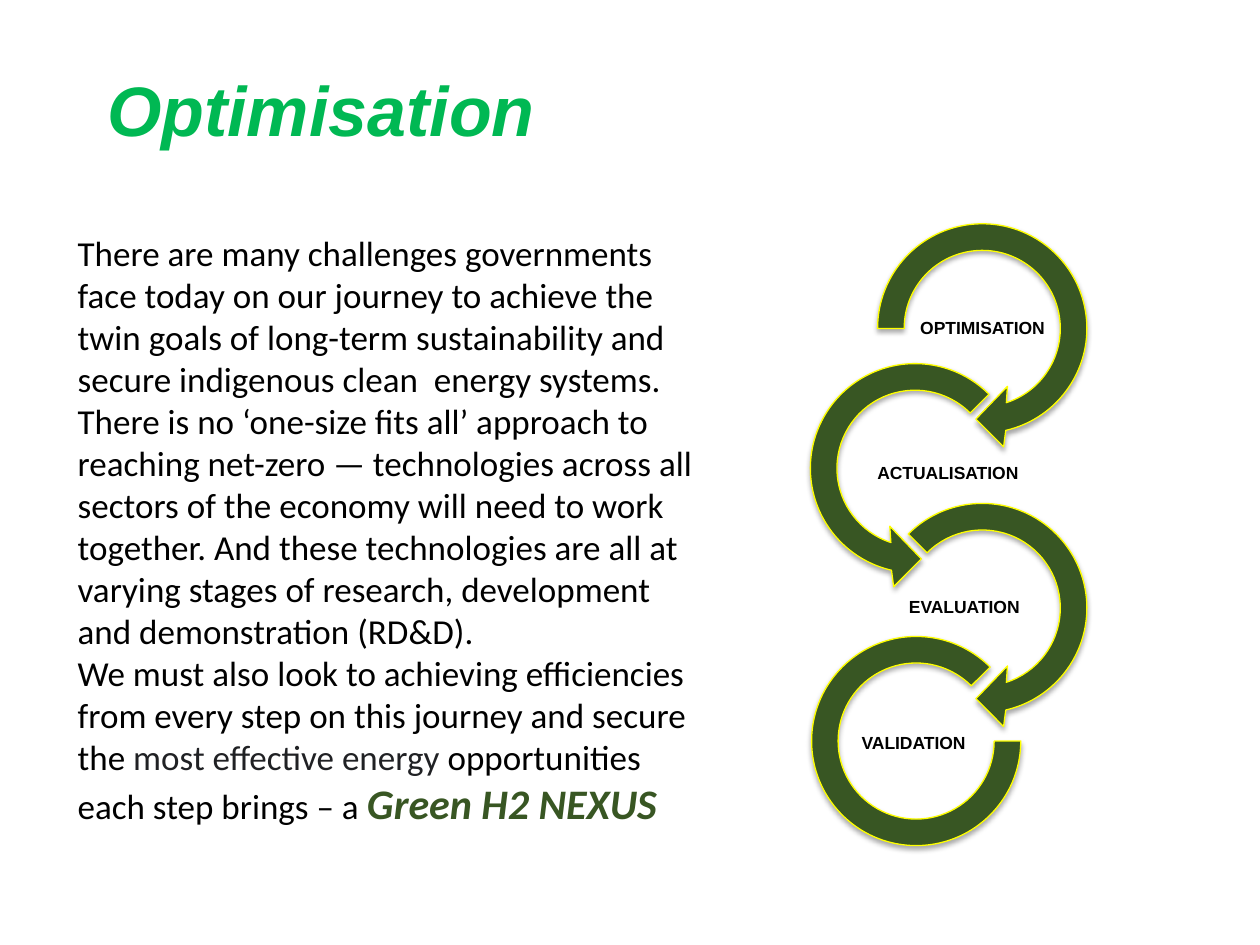
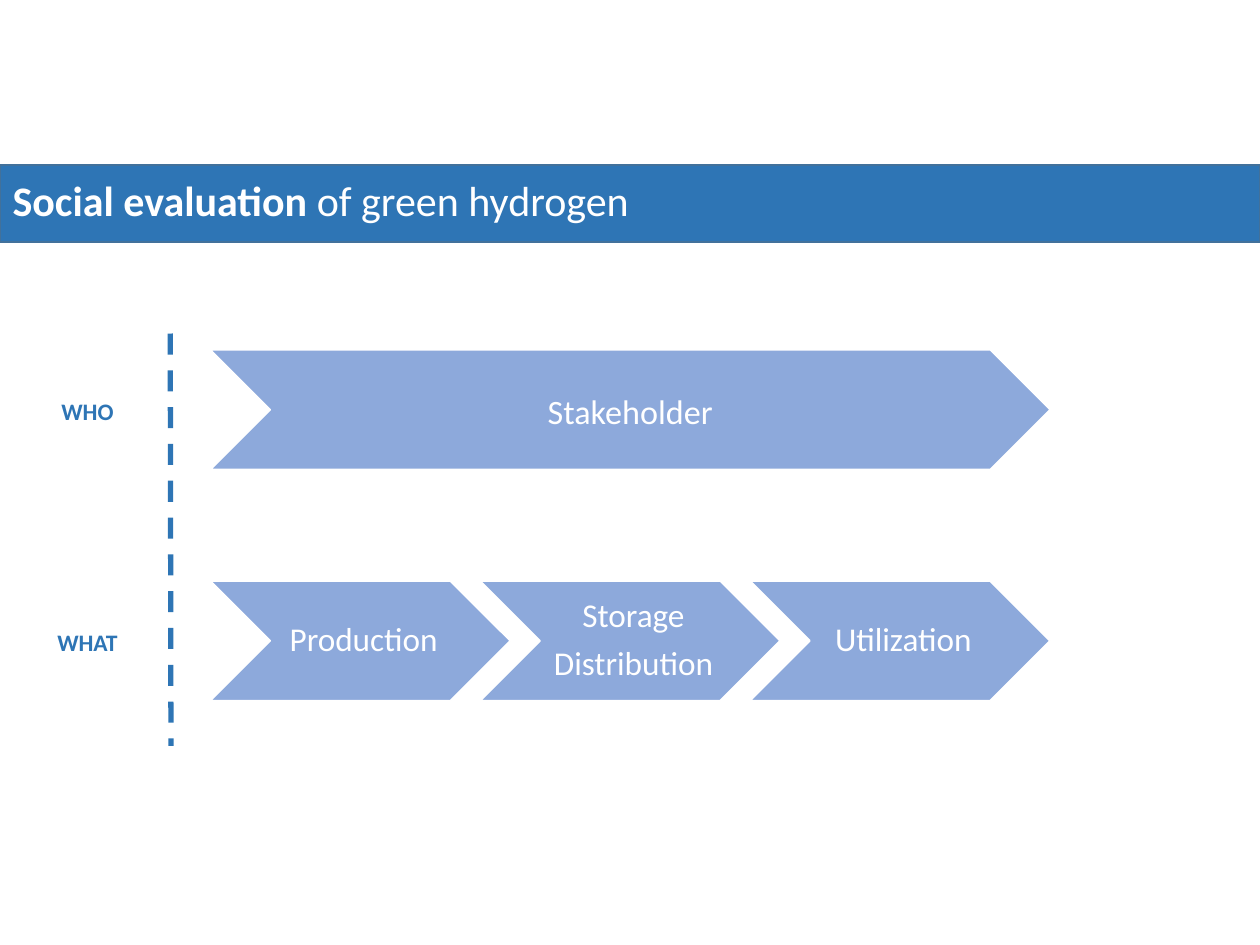
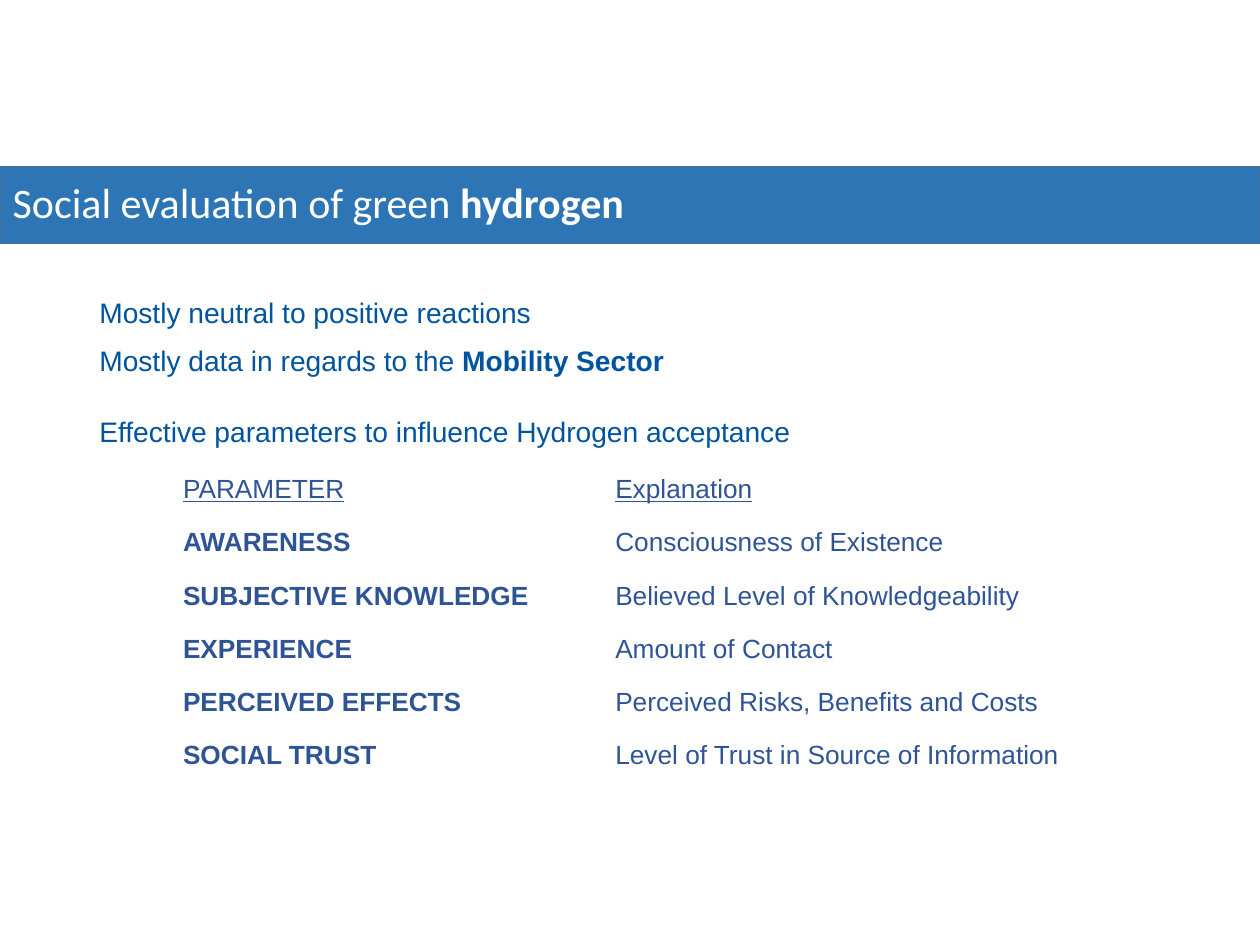
from math import cos, radians, sin, tan

from lxml.etree import SubElement
from pptx import Presentation
from pptx.dml.color import RGBColor
from pptx.enum.dml import MSO_LINE
from pptx.enum.shapes import MSO_CONNECTOR, MSO_SHAPE
from pptx.enum.text import MSO_ANCHOR, MSO_AUTO_SIZE, PP_ALIGN
from pptx.oxml.ns import qn
from pptx.util import Pt

BLACK = RGBColor(0x00, 0x00, 0x00)
WHITE = RGBColor(0xFF, 0xFF, 0xFF)
LIME = RGBColor(0x00, 0xB8, 0x53)
GREEN = RGBColor(0x38, 0x56, 0x23)
YELLOW = RGBColor(0xFF, 0xFF, 0x00)
GREY = RGBColor(0x20, 0x21, 0x24)
BLUE = RGBColor(0x2E, 0x75, 0xB5)
EDGE = RGBColor(0x42, 0x71, 0x9B)
PALE = RGBColor(0x8D, 0xA9, 0xDB)
NAVY = RGBColor(0x00, 0x54, 0x9F)
INDIGO = RGBColor(0x2F, 0x54, 0x96)


def setup(frame, pads=(7.2, 3.6, 7.2, 3.6), anchor=MSO_ANCHOR.TOP):
    """Wrap the text and set its left, top, right and bottom margins."""
    frame.word_wrap = True
    frame.auto_size = MSO_AUTO_SIZE.NONE
    frame.vertical_anchor = anchor
    frame.margin_left, frame.margin_top, frame.margin_right, frame.margin_bottom = map(Pt, pads)
    return frame


def write(para, texts, font, size, color, align=PP_ALIGN.LEFT, space=1.0, bold=False):
    """Add one run per text, all alike, and return the runs."""
    para.alignment = align
    para.line_spacing = space
    for text in texts:
        run = para.add_run()
        run.text = text
        run.font.name = font
        run.font.size = Pt(size)
        run.font.color.rgb = color
        run.font.bold = bold
    return para.runs


deck = Presentation()
deck.slide_width, deck.slide_height = Pt(720), Pt(540)
layout = deck.slide_layouts[5]

# Optimisation
slide = deck.slides.add_slide(layout)
title = slide.shapes.title
title.left, title.top, title.width, title.height = Pt(54), Pt(34.2), Pt(360), Pt(55.4)
frame = setup(title.text_frame)
write(frame.paragraphs[0], ["Optimisation"], "Arial", 40, LIME, bold=True)[0].font.italic = True

box = slide.shapes.add_textbox(Pt(37.3), Pt(128.7), Pt(373.7), Pt(368.6))
frame = setup(box.text_frame)
story = [
    ["There are many challenges governments face today on our journey to achieve the twin goals "
     "of long-term sustainability and secure indigenous clean  energy systems."],
    ["There is no ‘one-size fits all’ approach to reaching net-zero — technologies across all "
     "sectors of the economy will need to work together. And these technologies are all at "
     "varying stages of research, development and demonstration (RD&D)."],
    ["We must also look to achieving efficiencies from every step on this journey and secure the ",
     "most effective energy ", "opportunities each step brings – a ", "Green H2 NEXUS"],
]
for i, texts in enumerate(story):
    para = frame.add_paragraph() if i else frame.paragraphs[0]
    runs = write(para, texts, "Calibri", 20, BLACK)
runs[1].font.color.rgb = GREY
nexus = runs[3].font
nexus.size, nexus.bold, nexus.italic, nexus.color.rgb = Pt(24), True, True, GREEN

# Round arrows: three Bezier curves outside, the head, three curves inside
HALF, OUTER, INNER = 69.5, 59.8, 44.6
HEAD = [(12.2, 67.7), (-3.6, 51.8), (14.4, 33.1)]
rings = []
for i, (mid, side, start) in enumerate([(561.3, 1, 180), (522.9, -1, 225), (561.3, 1, 225)]):
    left, top = mid - HALF, 118.2 + 79.9 * i
    pen = slide.shapes.build_freeform(Pt(left), Pt(top))
    pen.add_line_segments([(Pt(left + x), Pt(top + y)) for x, y in
                           [(2 * HALF, 0), (2 * HALF, 2 * HALF), (0, 2 * HALF)]])
    ring = pen.convert_to_shape()
    marks = []
    for r, a, b in [(OUTER, start, 437), (INNER, 432, start)]:
        turn = (b - a) / 3
        bend = 4 / 3 * tan(radians(turn / 4))
        first = (r * cos(radians(a)), r * sin(radians(a)))
        marks.append(("a:lnTo" if marks else "a:moveTo", [first]))
        for k in range(3):
            u, v = radians(a + turn * k), radians(a + turn * (k + 1))
            marks.append(("a:cubicBezTo", [
                (r * (cos(u) - bend * sin(u)), r * (sin(u) + bend * cos(u))),
                (r * (cos(v) + bend * sin(v)), r * (sin(v) - bend * cos(v))),
                (r * cos(v), r * sin(v))]))
        if r == OUTER:
            marks += [("a:lnTo", [spot]) for spot in HEAD]
    track = ring.element.find(".//" + qn("a:path"))
    for kid in list(track):
        track.remove(kid)
    for tag, spots in marks:
        node = SubElement(track, qn(tag))
        for x, y in spots:
            SubElement(node, qn("a:pt"), x=str(Pt(HALF + side * x)), y=str(Pt(HALF + y)))
    SubElement(track, qn("a:close"))
    rings.append(ring)

arc = slide.shapes.add_shape(MSO_SHAPE.BLOCK_ARC, Pt(463.8), Pt(363.7), Pt(119.5), Pt(119.5))
arc.adjustments[0], arc.adjustments[1], arc.adjustments[2] = 0, 189, 0.127
for ring in rings + [arc]:
    ring.shadow.inherit = False
    ring.fill.solid()
    ring.fill.fore_color.rgb = GREEN
    ring.line.color.rgb = YELLOW
    ring.line.width = Pt(0.75)
    glow = SubElement(ring.element.spPr.find(qn("a:effectLst")), qn("a:outerShdw"),
                      blurRad=str(Pt(3.1)), dist=str(Pt(1.8)), dir="5400000", rotWithShape="0")
    tint = SubElement(glow, qn("a:srgbClr"), val=str(BLACK))
    SubElement(tint, qn("a:alpha"), val="35000")

for text, left, top, width in [("OPTIMISATION", 514.7, 168.5, 93.6),
                               ("ACTUALISATION", 486.2, 251.3, 110.9),
                               ("EVALUATION", 505.7, 327.9, 90.7),
                               ("VALIDATION", 483.1, 405.8, 77.8)]:
    box = slide.shapes.add_textbox(Pt(left), Pt(top), Pt(width), Pt(38.9))
    frame = setup(box.text_frame, (0.7, 0.7, 0.7, 0.7), MSO_ANCHOR.MIDDLE)
    write(frame.paragraphs[0], [text], "Arial", 10, BLACK, PP_ALIGN.CENTER, 0.9, True)

# Slides with a blue title band
pages = []
for top, width, texts, strong in [
        (94.2, 670.3, ["Social evaluation ", "of green hydrogen"], 0),
        (95.2, 659.5, ["Social evaluation of green", " hydrogen"], 1)]:
    slide = deck.slides.add_slide(layout)
    band = slide.shapes.add_shape(MSO_SHAPE.RECTANGLE, 0, Pt(top), Pt(720), Pt(43.9))
    band.shadow.inherit = False
    band.fill.solid()
    band.fill.fore_color.rgb = BLUE
    band.line.color.rgb = EDGE
    band.line.width = Pt(1)
    title = slide.shapes.title
    band.element.addnext(title.element)
    title.left, title.top, title.width, title.height = 0, Pt(top - 30.4), Pt(width), Pt(104.4)
    frame = setup(title.text_frame, anchor=MSO_ANCHOR.MIDDLE)
    runs = write(frame.paragraphs[0], texts, "Calibri", 24, WHITE, space=0.9)
    runs[strong].font.bold = True
    pages.append(slide)
chain, facts = pages

# Who and what
steps = [(120.2 + 154.2 * i, 332, 171.4, lines) for i, lines in
         enumerate([["Production"], ["Storage", "Distribution"], ["Utilization"]])]
steps.append((120.2, 199.9, 480, []))
for left, top, width, lines in steps:
    step = chain.shapes.add_shape(MSO_SHAPE.CHEVRON, Pt(left), Pt(top), Pt(width), Pt(68.4))
    step.shadow.inherit = False
    step.fill.solid()
    step.fill.fore_color.rgb = PALE
    step.line.color.rgb = WHITE
    step.line.width = Pt(1)
    frame = setup(step.text_frame, (5.8, 2, 2, 2), MSO_ANCHOR.MIDDLE)
    for i, line in enumerate(lines):
        para = frame.add_paragraph() if i else frame.paragraphs[0]
        write(para, [line], "Calibri", 19, WHITE, PP_ALIGN.CENTER, 0.9)
        para.space_before = Pt(6.7 * i)

rule = chain.shapes.add_connector(MSO_CONNECTOR.STRAIGHT, Pt(97.3), Pt(190.6), Pt(97.7), Pt(426.2))
rule.line.color.rgb = BLUE
rule.line.width = Pt(3)
rule.line.dash_style = MSO_LINE.DASH
SubElement(rule.element.spPr, qn("a:effectLst"))

for text, left, top, width, height, size, color, bold in [
        ("WHO", 15.1, 223.2, 69.8, 23.8, 13.5, BLUE, True),
        ("WHAT", 15.1, 355.4, 69.8, 23.8, 13.5, BLUE, True),
        ("Stakeholder", 120.2, 219.6, 480, 31, 19.5, WHITE, False)]:
    box = chain.shapes.add_textbox(Pt(left), Pt(top), Pt(width), Pt(height))
    frame = setup(box.text_frame)
    write(frame.paragraphs[0], [text], "Calibri", size, color, PP_ALIGN.CENTER, bold=bold)

# Parameters of acceptance
box = facts.shapes.add_textbox(Pt(49.7), Pt(144), Pt(620.6), Pt(208))
frame = setup(box.text_frame, (7.2, 29.8, 7.2, 3.6))
notes = [(["Mostly neutral to positive reactions"], 0),
         (["Mostly data in regards to the ", "Mobility Sector"], 13.9),
         (["Effective parameters to influence Hydrogen acceptance"], 27.2)]
for i, (texts, gap) in enumerate(notes):
    para = frame.add_paragraph() if i else frame.paragraphs[0]
    runs = write(para, texts, "Arial", 16.1, NAVY, space=0.7)
    para.space_before = Pt(gap)
    if len(runs) > 1:
        runs[1].font.bold = True

rows = [("PARAMETER", "Explanation"),
        ("AWARENESS", "Consciousness of Existence"),
        ("SUBJECTIVE KNOWLEDGE", "Believed Level of Knowledgeability"),
        ("EXPERIENCE", "Amount of Contact"),
        ("PERCEIVED EFFECTS", "Perceived Risks, Benefits and Costs"),
        ("SOCIAL TRUST", "Level of Trust in Source of Information")]
table = facts.shapes.add_table(len(rows), 2, Pt(99.2), Pt(260.3), Pt(580.3), Pt(177)).table
table.first_row = table.horz_banding = False
table.columns[0].width, table.columns[1].width = Pt(211), Pt(369.3)
for r, row in enumerate(rows):
    for c, text in enumerate(row):
        cell = table.cell(r, c)
        cell.fill.background()
        cell.vertical_anchor = MSO_ANCHOR.BOTTOM
        cell.margin_left, cell.margin_right = Pt(5.4 + 36 * c), Pt(5.4)
        cell.margin_top = cell.margin_bottom = Pt(2.7)
        para = cell.text_frame.paragraphs[0]
        runs = write(para, [text], "Arial", 15, INDIGO, space=1.5, bold=r > 0 and c == 0)
        runs[0].font.underline = r == 0

deck.save("out.pptx")
